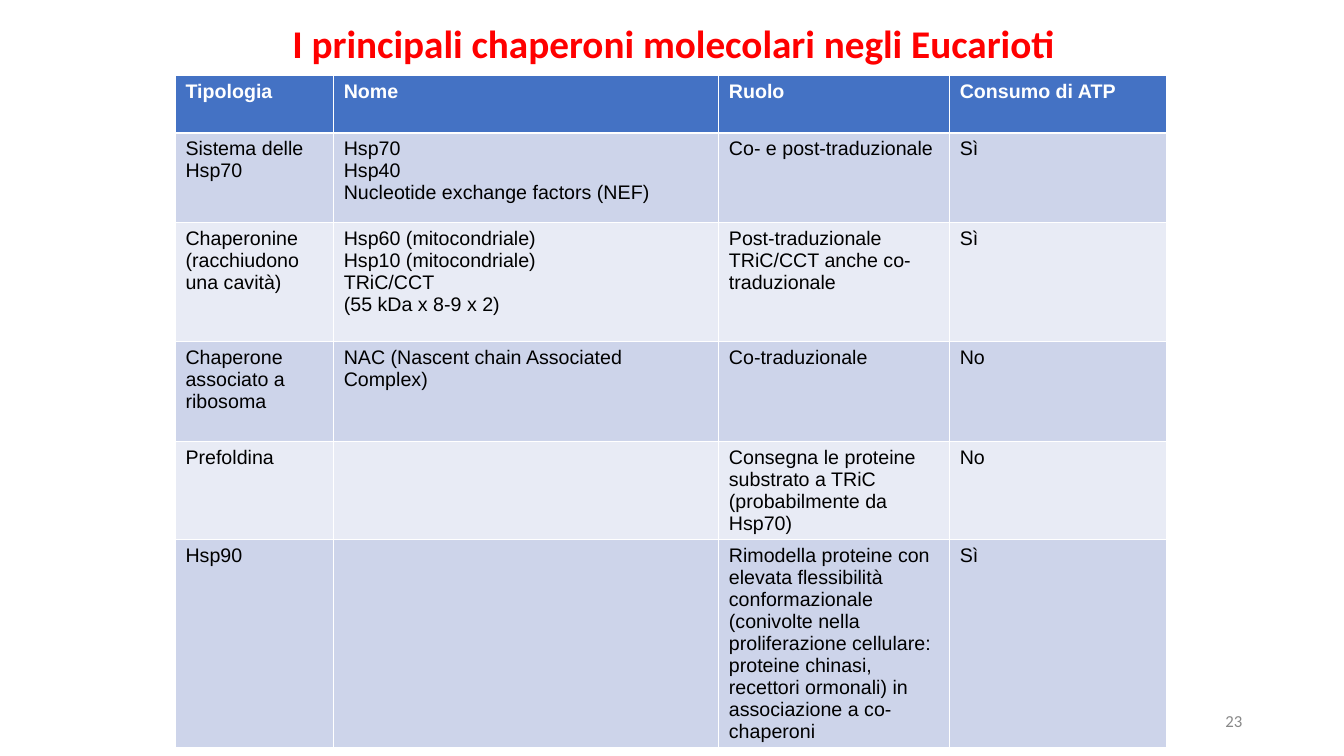
import pptx
import pptx.dml.color
import pptx.enum.text
import pptx.util

Inches = pptx.util.Inches
Align = pptx.enum.text.PP_ALIGN
Anchor = pptx.enum.text.MSO_ANCHOR

COLORS = {
    "title": "FF0000",
    "header": "4472C4",
    "header text": "FFFFFF",
    "odd row": "CDD4EA",
    "even row": "E8EBF5",
    "body text": "000000",
    "page number": "888888",
}


def color(name):
    return pptx.dml.color.RGBColor.from_string(COLORS[name])


def write(frame, text, ink, align=Align.LEFT, **font_format):
    """Fill a text frame, one paragraph per line, in a single format."""
    frame.text = text
    for para in frame.paragraphs:
        para.alignment = align
        for span in para.runs:
            span.font.color.rgb = color(ink)
            for name, value in font_format.items():
                setattr(span.font, name, value)


deck = pptx.Presentation()
deck.slide_width, deck.slide_height = Inches(13.33), Inches(7.5)
page = deck.slides.add_slide(deck.slide_layouts[5])

# Title
title = page.shapes.title
title.left, title.top = Inches(2.8), Inches(0.14)
title.width, title.height = Inches(7.85), Inches(0.88)
title.text_frame.vertical_anchor = Anchor.TOP
title.text_frame.auto_size = pptx.enum.text.MSO_AUTO_SIZE.NONE
write(title.text_frame, "I principali chaperoni molecolari negli Eucarioti", "title",
      name="Calibri", size=pptx.util.Pt(28), bold=True)

# Table of chaperones
chaperones = [
    ("Tipologia", "Nome", "Ruolo", "Consumo di ATP"),
    ("Sistema delle Hsp70", "Hsp70\nHsp40\nNucleotide exchange factors (NEF)",
     "Co- e post-traduzionale", "Sì"),
    ("Chaperonine\n(racchiudono una cavità)",
     "Hsp60 (mitocondriale)\nHsp10 (mitocondriale)\nTRiC/CCT\n(55 kDa x 8-9 x 2)",
     "Post-traduzionale\nTRiC/CCT anche co-traduzionale", "Sì"),
    ("Chaperone associato a ribosoma", "NAC (Nascent chain Associated\nComplex)",
     "Co-traduzionale", "No"),
    ("Prefoldina", "",
     "Consegna le proteine substrato a TRiC (probabilmente da Hsp70)", "No"),
    ("Hsp90", "",
     "Rimodella proteine con elevata flessibilità conformazionale (conivolte nella "
     "proliferazione cellulare: proteine chinasi, recettori ormonali) in associazione "
     "a co-chaperoni", "Sì"),
]
column_widths = [1.57, 3.82, 2.29, 2.15]
row_heights = [0.57, 0.89, 1.18, 0.99, 0.76, 2.04]

table = page.shapes.add_table(
    len(row_heights), len(column_widths), Inches(1.74), Inches(0.75),
    Inches(sum(column_widths)), Inches(sum(row_heights))).table
for column, width in zip(table.columns, column_widths):
    column.width = Inches(width)
for row, height in zip(table.rows, row_heights):
    row.height = Inches(height)

for row_index, texts in enumerate(chaperones):
    is_header = row_index == 0
    band = "header" if is_header else "odd row" if row_index % 2 else "even row"
    ink = "header text" if is_header else "body text"
    for column_index, text in enumerate(texts):
        cell = table.cell(row_index, column_index)
        cell.fill.solid()
        cell.fill.fore_color.rgb = color(band)
        write(cell.text_frame, text, ink,
              name="Arial", size=pptx.util.Pt(14), bold=is_header)

# Page number
number_box = page.shapes.add_textbox(Inches(9.42), Inches(6.95), Inches(3), Inches(0.4))
number_box.text_frame.word_wrap = True
number_box.text_frame.vertical_anchor = Anchor.MIDDLE
write(number_box.text_frame, "23", "page number", Align.RIGHT,
      name="Calibri", size=pptx.util.Pt(12))

deck.save("out.pptx")
